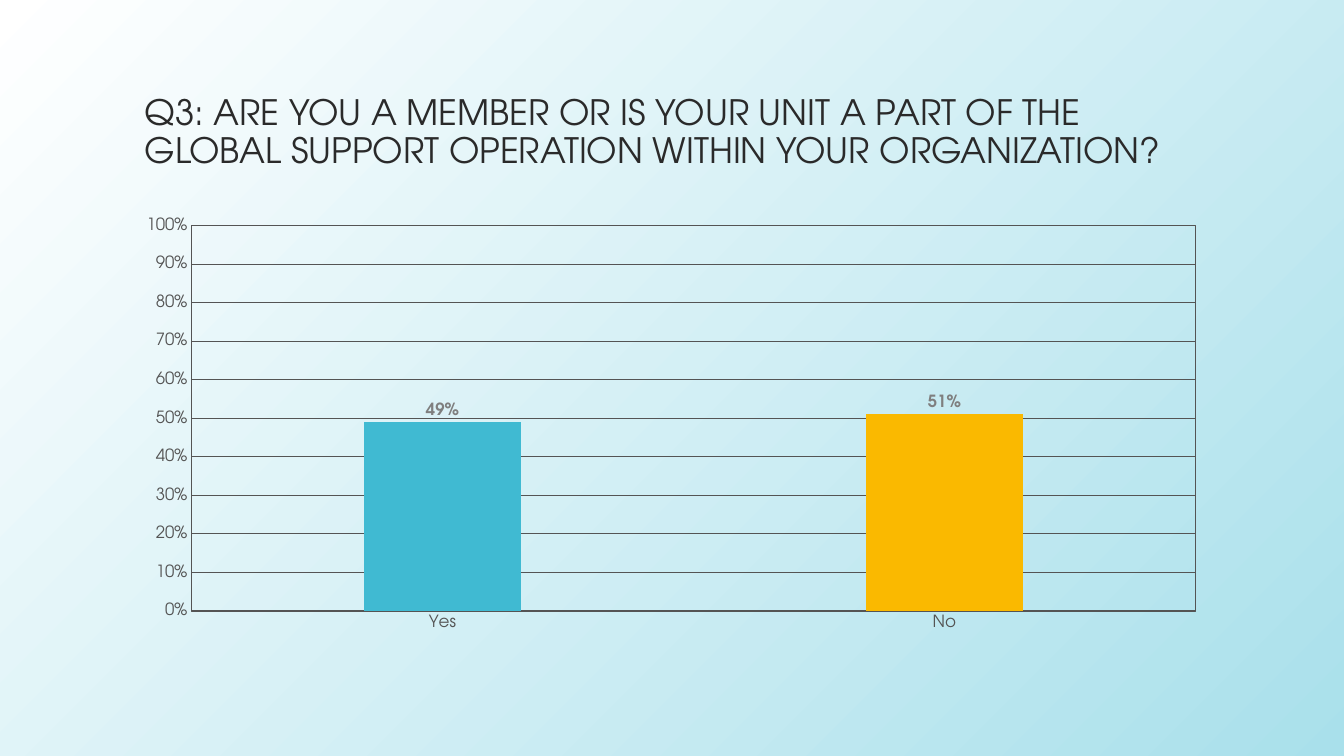
"""Builds the survey slide for question 3: a title above a two-bar percentage chart."""
from dataclasses import dataclass

from lxml import etree
from pptx import Presentation
from pptx.chart.data import CategoryChartData
from pptx.dml.color import RGBColor
from pptx.enum.chart import XL_CHART_TYPE, XL_LABEL_POSITION, XL_TICK_MARK
from pptx.enum.text import MSO_ANCHOR, MSO_AUTO_SIZE, PP_ALIGN
from pptx.oxml import parse_xml
from pptx.oxml.ns import nsdecls, qn
from pptx.util import Cm, Pt

COLUMN = XL_CHART_TYPE.COLUMN_CLUSTERED
OUTSIDE_END = XL_LABEL_POSITION.OUTSIDE_END
NO_TICK = XL_TICK_MARK.NONE
BOTTOM = MSO_ANCHOR.BOTTOM
NO_AUTOFIT = MSO_AUTO_SIZE.NONE
LEFT = PP_ALIGN.LEFT


@dataclass(frozen=True)
class Theme:
    font: str = "TeX Gyre Adventor"
    title: str = "2A2A2A"
    axis: str = "545454"
    label: str = "7F7F7F"
    bars: tuple = ("40BAD2", "FAB900")
    background: tuple = ("FFFFFF", "A9E0EB")
    title_size: int = 25
    chart_size: int = 10
    label_size: int = 12


theme = Theme()


def style(font, size, color, bold=False):
    font.name = theme.font
    font.size = Pt(size)
    font.bold = bold
    font.color.rgb = RGBColor.from_string(color)


def write(tf, text, align=LEFT, spacing=1.0, **fmt):
    p = tf.paragraphs[0]
    p.alignment = align
    p.line_spacing = spacing
    r = p.add_run()
    r.text = text
    style(r.font, **fmt)


prs = Presentation()
prs.slide_width, prs.slide_height = Cm(33.87), Cm(19.05)
s = prs.slides.add_slide(prs.slide_layouts[5])

fill = s.background.fill
fill.gradient()
fill.gradient_angle = 315
for stop, color in zip(fill.gradient_stops, theme.background):
    stop.color.rgb = RGBColor.from_string(color)

left, width = Cm(3.39), Cm(27.09)
title = s.shapes.title
title.left, title.top, title.width, title.height = left, Cm(0.76), width, Cm(3.68)
tf = title.text_frame
tf.word_wrap = True
tf.auto_size = NO_AUTOFIT
tf.vertical_anchor = BOTTOM
write(tf, "Q3: ARE YOU A MEMBER OR IS YOUR UNIT A PART OF THE GLOBAL SUPPORT "
      "OPERATION WITHIN YOUR ORGANIZATION?",
      spacing=0.9, size=theme.title_size, color=theme.title)

data = CategoryChartData(number_format="0%")
data.categories = ["Yes", "No"]
data.add_series("Series 1", [0.49, 0.51])
chart = s.shapes.add_chart(COLUMN, left, Cm(5.08), width, Cm(12.07), data).chart
chart.has_title = False
chart.has_legend = False
style(chart.font, theme.chart_size, theme.axis)

axis_color = RGBColor.from_string(theme.axis)
cat_axis, val_axis = chart.category_axis, chart.value_axis
for axis in (cat_axis, val_axis):
    axis.major_tick_mark = axis.minor_tick_mark = NO_TICK
    style(axis.tick_labels.font, theme.label_size, theme.axis)

cat_axis.format.line.color.rgb = axis_color
cat_axis.format.line.width = Pt(1)
val_axis.format.line.fill.background()
val_axis.minimum_scale, val_axis.maximum_scale, val_axis.major_unit = 0, 1, 0.1
val_axis.tick_labels.number_format = "0%"
val_axis.tick_labels.number_format_is_linked = False
val_axis.major_gridlines.format.line.color.rgb = axis_color
val_axis.major_gridlines.format.line.width = Pt(0.75)

plot = chart.plots[0]
plot.gap_width, plot.overlap = 219, -27
plot.vary_by_categories = False
series = plot.series[0]
for i, color in enumerate(theme.bars):
    bar = series.points[i].format
    bar.fill.solid()
    bar.fill.fore_color.rgb = RGBColor.from_string(color)
    bar.line.fill.background()

labels = series.data_labels
labels.show_value = True
labels.number_format = "0%"
labels.number_format_is_linked = False
labels.position = OUTSIDE_END
style(labels.font, theme.label_size, theme.label, bold=True)

plot_area = chart.element.find(".//" + qn("c:plotArea"))
for layout in plot_area.findall(qn("c:layout")):
    plot_area.remove(layout)
layout = etree.Element(qn("c:layout"))
manual = etree.SubElement(layout, qn("c:manualLayout"))
for tag, value in (("layoutTarget", "inner"), ("xMode", "edge"), ("yMode", "edge"),
                   ("x", 0.053), ("y", 0.05), ("w", 0.934), ("h", 0.805)):
    etree.SubElement(manual, qn("c:" + tag)).set("val", str(value))
plot_area.insert(0, layout)
plot_area.append(parse_xml(
    f'<c:spPr {nsdecls("c", "a")}><a:noFill/><a:ln w="{Pt(0.75)}"><a:solidFill>'
    f'<a:srgbClr val="{theme.axis}"/></a:solidFill></a:ln></c:spPr>'))

prs.save("out.pptx")
